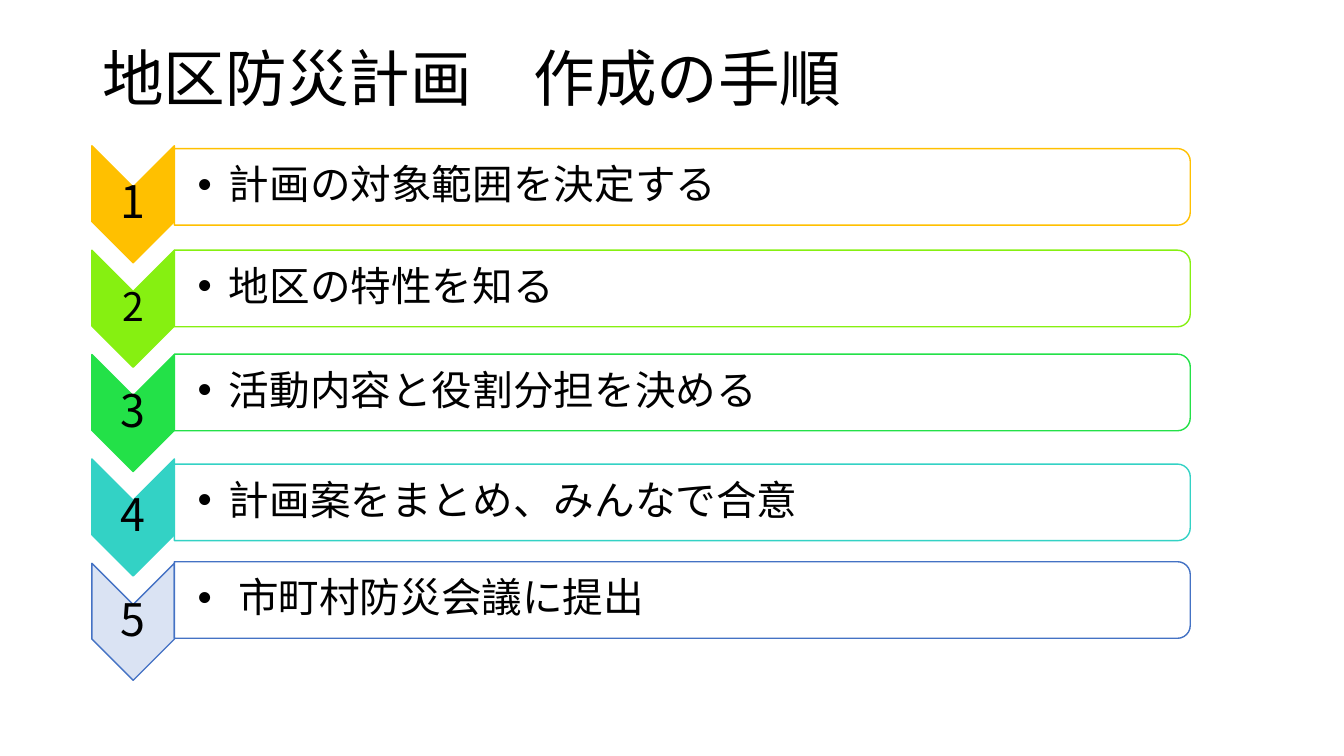
"""Build the slide that lists the five steps of a district disaster plan."""
from dataclasses import dataclass

from lxml import etree
from pptx import Presentation
from pptx.dml.color import RGBColor
from pptx.enum.shapes import MSO_SHAPE
from pptx.enum.text import MSO_ANCHOR, PP_ALIGN
from pptx.oxml.ns import qn
from pptx.util import Cm, Pt

CHEVRON = MSO_SHAPE.CHEVRON
BAR = MSO_SHAPE.ROUND_2_SAME_RECTANGLE
MIDDLE = MSO_ANCHOR.MIDDLE
LEFT = PP_ALIGN.LEFT
CENTER = PP_ALIGN.CENTER
FONT = "Noto Sans CJK JP"
FIRST = 4.11
PITCH = 2.63


@dataclass
class Box:
    left: float
    top: float
    width: float
    height: float

    def frame(self) -> list:
        return [Cm(v) for v in (self.left, self.top, self.width, self.height)]


@dataclass
class Step:
    text: str
    fill: str
    line: str
    top: float
    size: int = 32


STEPS = [
    Step("計画の対象範囲を決定する", "FFC000", "FFC000", 3.84),
    Step("地区の特性を知る", "86F011", "86F011", 6.4, 28),
    Step("活動内容と役割分担を決める", "23E148", "23E148", 9.02),
    Step("計画案をまとめ、みんなで合意", "33D2C5", "33D2C5", 11.79),
    Step(" 市町村防災会議に提出", "DAE3F3", "4472C4", 14.25),
]


def color(code: str) -> RGBColor:
    return RGBColor.from_string(code)


def add_shape(slide, kind, box: Box, fill: str, line: str):
    shape = slide.shapes.add_shape(kind, *box.frame())
    shape.rotation = 90
    shape.shadow.inherit = False
    shape.fill.solid()
    shape.fill.fore_color.rgb = color(fill)
    shape.line.color.rgb = color(line)
    shape.line.width = Pt(1)
    return shape


def add_text(slide, box: Box, text: str, size: int, align, pad: tuple):
    frame = slide.shapes.add_textbox(*box.frame()).text_frame
    frame.word_wrap = True
    frame.vertical_anchor = MIDDLE
    frame.margin_left, frame.margin_right = Cm(pad[0]), Cm(pad[1])
    frame.margin_top = frame.margin_bottom = Cm(0.05)
    para = frame.paragraphs[0]
    para.alignment = align
    para.line_spacing = 0.9
    run = para.add_run()
    run.text = text
    run.font.size = Pt(size)
    run.font.name = FONT
    run.font.color.rgb = color("000000")
    east = etree.SubElement(run.font._element, qn("a:ea"))
    east.set("typeface", FONT)
    return para


def add_bullet(para) -> None:
    props = para._p.get_or_add_pPr()
    props.set("marL", str(Cm(0.79)))
    props.set("indent", str(-Cm(0.79)))
    etree.SubElement(props, qn("a:buFont")).set("typeface", "Arial")
    etree.SubElement(props, qn("a:buChar")).set("char", "•")


def add_step(slide, index: int, step: Step) -> None:
    top = FIRST + index * PITCH
    add_shape(slide, CHEVRON, Box(1.88, top, 2.95, 2.08), step.fill, step.line)
    add_text(slide, Box(2.32, top + 0.59, 2.08, 0.89), str(index + 1),
             step.size, CENTER, (0.05, 0.05))
    bar = Box(16.23, step.top - 11.93, 1.93, 25.6)
    add_shape(slide, BAR, bar, "FFFFFF", step.line)
    para = add_text(slide, Box(4.4, step.top, 25.5, 1.73), step.text,
                    29, LEFT, (0.58, 0.05))
    add_bullet(para)


def main() -> None:
    deck = Presentation()
    deck.slide_width, deck.slide_height = Cm(33.87), Cm(19.05)
    slide = deck.slides.add_slide(deck.slide_layouts[6])
    add_text(slide, Box(2.33, 1.01, 29.21, 2.1), "地区防災計画　作成の手順",
             44, LEFT, (0.25, 0.25))
    for index, step in enumerate(STEPS):
        add_step(slide, index, step)
    deck.save("out.pptx")


if __name__ == "__main__":
    main()
